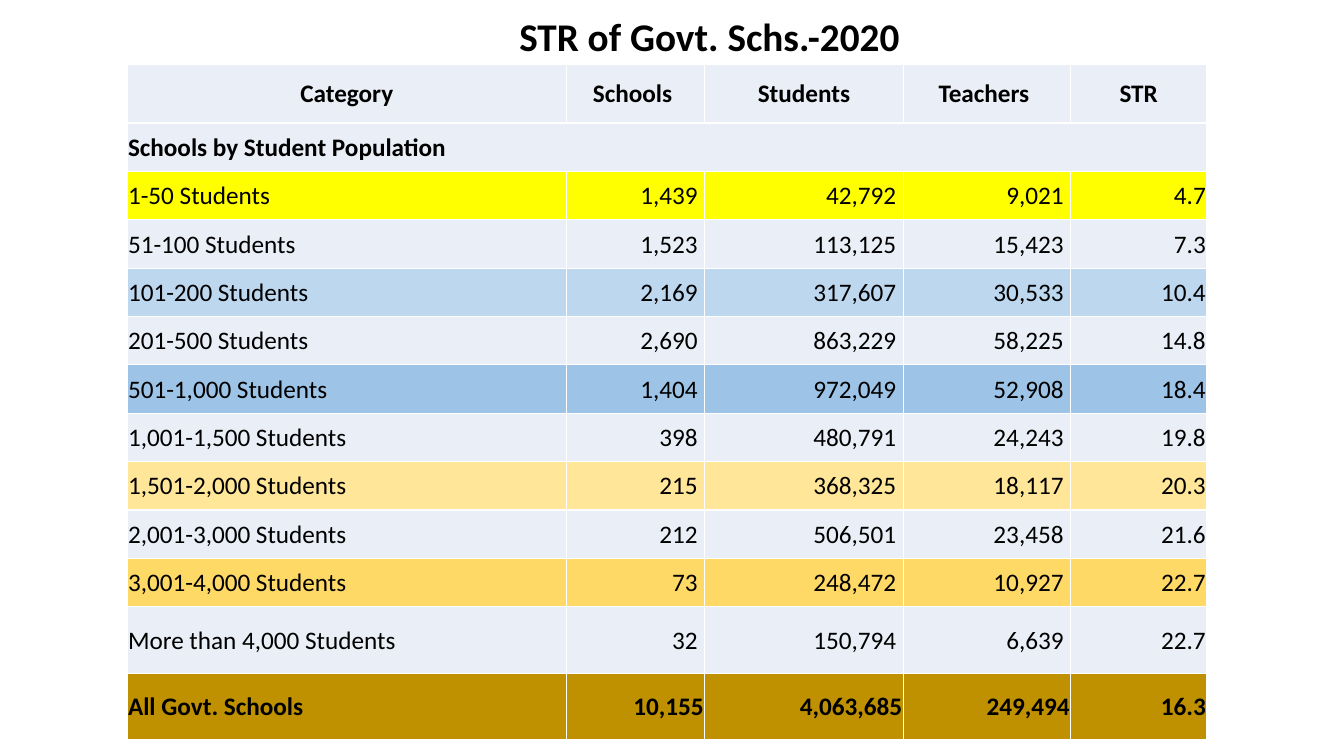
from dataclasses import dataclass

from lxml.etree import SubElement
from pptx import Presentation
from pptx.dml.color import RGBColor
from pptx.enum.text import MSO_ANCHOR, MSO_AUTO_SIZE, PP_ALIGN
from pptx.oxml.ns import qn
from pptx.slide import Slide
from pptx.table import _Cell
from pptx.text.text import _Paragraph
from pptx.util import Emu, Pt


@dataclass(frozen=True)
class Theme:
    font: str = "Calibri"
    title_size: int = 28
    table_size: int = 18
    border_width: int = 1
    text: str = "000000"
    border: str = "FFFFFF"
    plain: str = "EAEFF7"
    yellow: str = "FFFF00"
    light_blue: str = "BDD7EE"
    blue: str = "9DC3E6"
    light_gold: str = "FFE699"
    gold: str = "FFD966"
    dark_gold: str = "BF9000"


@dataclass(frozen=True)
class TableRow:
    values: tuple[str, ...]
    fill: str
    height: int = 48
    bold: bool = False
    alignment: PP_ALIGN = PP_ALIGN.RIGHT
    padded_columns: tuple[int, ...] = (1, 2, 3)


THEME = Theme()
EMU_PER_PX = 9144
COLUMN_WIDTHS = (436, 137, 197, 166, 135)
CELL_MARGIN = 1
NUMBER_PADDING = 7
SECTION_ROW = 1

ROWS = (
    TableRow(("Category", "Schools", "Students", "Teachers", "STR"), THEME.plain, 58, True, PP_ALIGN.CENTER, (1, 3)),
    TableRow(("Schools by Student Population", "", "", "", ""), THEME.plain, bold=True),
    TableRow(("1-50 Students", "1,439", "42,792", "9,021", "4.7"), THEME.yellow),
    TableRow(("51-100 Students", "1,523", "113,125", "15,423", "7.3"), THEME.plain),
    TableRow(("101-200 Students", "2,169", "317,607", "30,533", "10.4"), THEME.light_blue),
    TableRow(("201-500 Students", "2,690", "863,229", "58,225", "14.8"), THEME.plain),
    TableRow(("501-1,000 Students", "1,404", "972,049", "52,908", "18.4"), THEME.blue),
    TableRow(("1,001-1,500 Students", "398", "480,791", "24,243", "19.8"), THEME.plain),
    TableRow(("1,501-2,000 Students", "215", "368,325", "18,117", "20.3"), THEME.light_gold),
    TableRow(("2,001-3,000 Students", "212", "506,501", "23,458", "21.6"), THEME.plain),
    TableRow(("3,001-4,000 Students", "73", "248,472", "10,927", "22.7"), THEME.gold),
    TableRow(("More than 4,000 Students", "32", "150,794", "6,639", "22.7"), THEME.plain, 66),
    TableRow(("All Govt. Schools", "10,155", "4,063,685", "249,494", "16.3"), THEME.dark_gold, 66, True, padded_columns=()),
)


def px(length: int) -> Emu:
    return Emu(length * EMU_PER_PX)


def format_paragraph(paragraph: _Paragraph, size: int, bold: bool, alignment: PP_ALIGN) -> None:
    paragraph.alignment = alignment
    for run in paragraph.runs:
        run.font.name = THEME.font
        run.font.size = Pt(size)
        run.font.bold = bold
        run.font.color.rgb = RGBColor.from_string(THEME.text)


def add_borders(cell: _Cell) -> None:
    properties = cell._tc.get_or_add_tcPr()
    for position, side in enumerate(("lnL", "lnR", "lnT", "lnB")):
        line = SubElement(properties, qn(f"a:{side}"), w=str(Pt(THEME.border_width)))
        fill = SubElement(line, qn("a:solidFill"))
        SubElement(fill, qn("a:srgbClr"), val=THEME.border)
        properties.insert(position, line)


def draw_cell(cell: _Cell, row: TableRow, column: int) -> None:
    cell.fill.solid()
    cell.fill.fore_color.rgb = RGBColor.from_string(row.fill)
    cell.vertical_anchor = MSO_ANCHOR.MIDDLE
    cell.margin_left = cell.margin_top = px(CELL_MARGIN)
    cell.margin_right = px(NUMBER_PADDING if column in row.padded_columns else CELL_MARGIN)
    cell.margin_bottom = px(0)
    cell.text_frame.text = row.values[column]
    is_label = column == 0 and row.alignment == PP_ALIGN.RIGHT
    alignment = PP_ALIGN.LEFT if is_label else row.alignment
    paragraph = cell.text_frame.paragraphs[0]
    format_paragraph(paragraph, THEME.table_size, row.bold, alignment)
    paragraph.font.size = Pt(THEME.table_size)
    add_borders(cell)


def draw_title(slide: Slide) -> None:
    title = slide.shapes.title
    title.left, title.top, title.width, title.height = map(px, (410, 12, 587, 52))
    frame = title.text_frame
    frame.text = "STR of Govt. Schs.-2020"
    frame.word_wrap = True
    frame.auto_size = MSO_AUTO_SIZE.NONE
    frame.vertical_anchor = MSO_ANCHOR.MIDDLE
    paragraph = frame.paragraphs[0]
    paragraph.line_spacing = 0.9
    format_paragraph(paragraph, THEME.title_size, True, PP_ALIGN.CENTER)


def draw_table(slide: Slide) -> None:
    width = sum(COLUMN_WIDTHS)
    height = sum(row.height for row in ROWS)
    frame = slide.shapes.add_table(len(ROWS), len(COLUMN_WIDTHS), px(126), px(64), px(width), px(height))
    table = frame.table
    table.first_row = table.horz_banding = False
    for column, column_width in zip(table.columns, COLUMN_WIDTHS):
        column.width = px(column_width)
    for row_index, row in enumerate(ROWS):
        table.rows[row_index].height = px(row.height)
        for column_index in range(len(COLUMN_WIDTHS)):
            draw_cell(table.cell(row_index, column_index), row, column_index)
    last_column = len(COLUMN_WIDTHS) - 1
    table.cell(SECTION_ROW, 0).merge(table.cell(SECTION_ROW, last_column))


def main() -> None:
    presentation = Presentation()
    presentation.slide_width = px(1333)
    presentation.slide_height = px(750)
    slide = presentation.slides.add_slide(presentation.slide_layouts[5])
    draw_title(slide)
    draw_table(slide)
    presentation.save("out.pptx")


if __name__ == "__main__":
    main()
